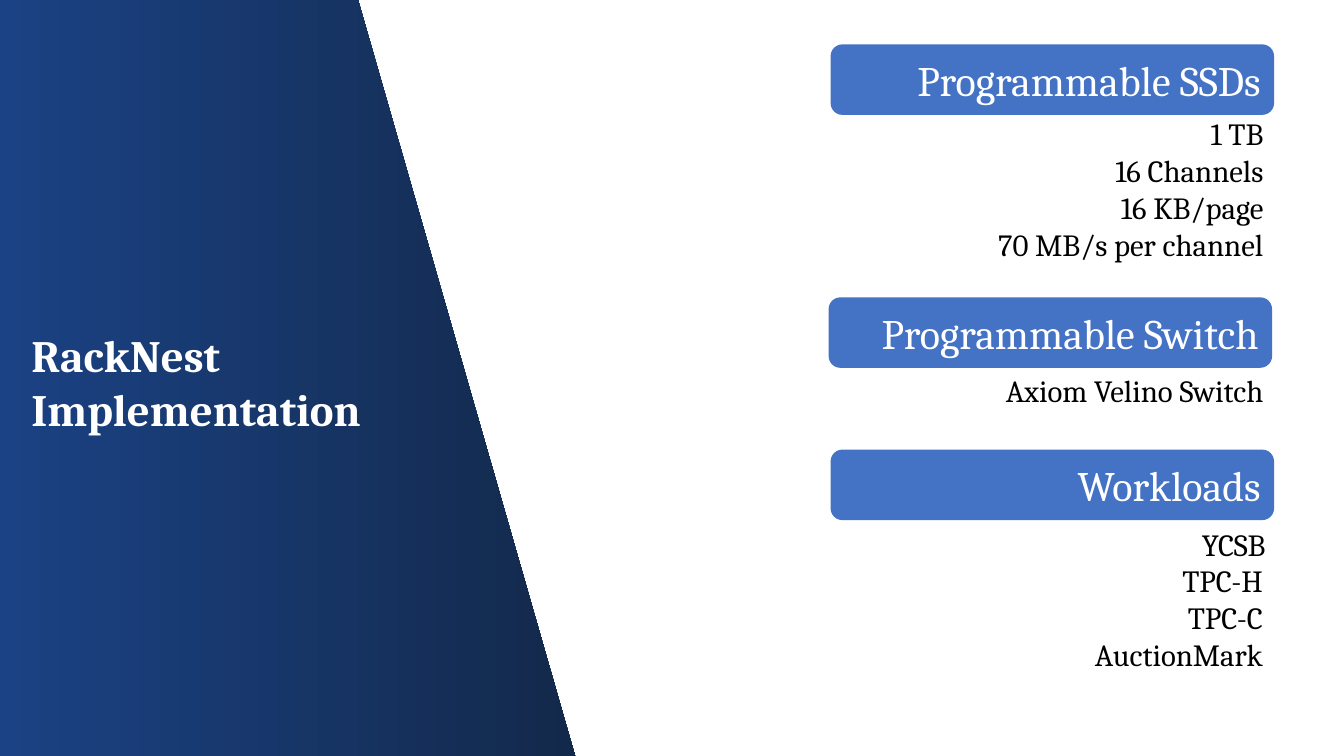
from pptx import Presentation, util as u
from pptx.dml.color import RGBColor
from pptx.enum import shapes, text

WHITE = RGBColor(0xFF, 0xFF, 0xFF)
BLACK = RGBColor(0x00, 0x00, 0x00)
BLUE = RGBColor(0x44, 0x72, 0xC4)
PANEL_LEFT = RGBColor(0x1B, 0x42, 0x84)
PANEL_RIGHT = RGBColor(0x13, 0x29, 0x4B)
FONT = "Cambria"

deck = Presentation()
deck.slide_width, deck.slide_height = u.Inches(13.33), u.Inches(7.5)
COL, ROW = deck.slide_width / 100, deck.slide_height / 100
slide = deck.slides.add_slide(deck.slide_layouts[5])


def place(left, top, width, height):
    return [round(n) for n in (left * COL, top * ROW, width * COL, height * ROW)]


def write(frame, lines, size, color, align, bold=False):
    frame.word_wrap = True
    for i, line in enumerate(lines):
        paragraph = frame.add_paragraph() if i else frame.paragraphs[0]
        paragraph.alignment = align
        run = paragraph.add_run()
        run.text = line
        run.font.name = FONT
        run.font.size = u.Pt(size)
        run.font.bold = bold
        run.font.color.rgb = color


outline = slide.shapes.build_freeform(0, round(100.13 * ROW), scale=1.0)
corners = [(42.9, 100.67), (26.56, -0.53), (0, 0)]
outline.add_line_segments([(round(x * COL), round(y * ROW)) for x, y in corners], close=True)
panel = outline.convert_to_shape()
panel.shadow.inherit = False
panel.line.fill.background()
panel.fill.gradient()
panel.fill.gradient_angle = 0
for stop, color, position in zip(panel.fill.gradient_stops, (PANEL_LEFT, PANEL_RIGHT), (0, 1)):
    stop.color.rgb = color
    stop.position = position

title = slide.shapes.title
title.left, title.top, title.width, title.height = place(1.58, 42.67, 31.2, 14.67)
title.text_frame.auto_size = text.MSO_AUTO_SIZE.NONE
title.text_frame.vertical_anchor = text.MSO_ANCHOR.TOP
write(title.text_frame, ["RackNest Implementation"], 32, WHITE, text.PP_ALIGN.LEFT, bold=True)
slide.shapes._spTree.insert(2, panel._element)

details = [
    ((55.44, 14.53, 39.3, 21.07), ["1 TB", "16 Channels", "16 KB/page", "70 MB/s per channel"]),
    ((51.84, 48.53, 42.9, 6.27), ["Axiom Velino Switch"]),
    ((52, 68.93, 42.9, 6.27), ["YCSB"]),
    ((50, 73.6, 44.7, 16.13), ["TPC-H", "TPC-C", "AuctionMark"]),
]
for area, lines in details:
    detail = slide.shapes.add_textbox(*place(*area))
    write(detail.text_frame, lines, 22, BLACK, text.PP_ALIGN.RIGHT)
    detail.text_frame.auto_size = text.MSO_AUTO_SIZE.SHAPE_TO_FIT_TEXT

headings = [
    ("Programmable SSDs", 61.8, 5.87),
    ("Programmable Switch", 61.65, 39.33),
    ("Workloads", 61.8, 59.47),
]
for topic, left, top in headings:
    heading = slide.shapes.add_shape(shapes.MSO_SHAPE.ROUNDED_RECTANGLE, *place(left, top, 33, 9.33))
    heading.shadow.inherit = False
    heading.fill.solid()
    heading.fill.fore_color.rgb = BLUE
    heading.line.fill.background()
    heading.text_frame.vertical_anchor = text.MSO_ANCHOR.MIDDLE
    write(heading.text_frame, [topic], 30, WHITE, text.PP_ALIGN.RIGHT)

deck.save("out.pptx")
